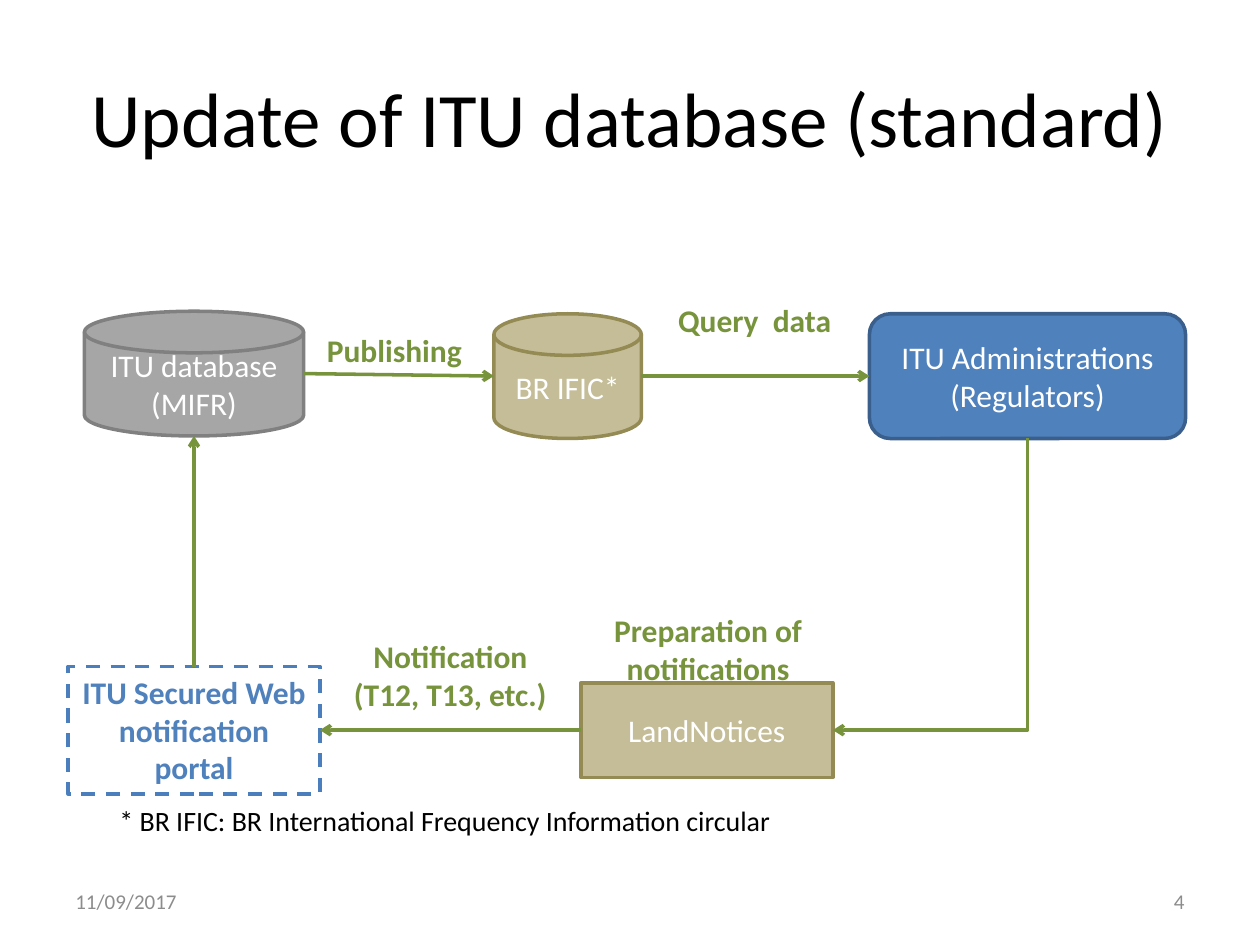
from lxml.etree import SubElement
from pptx import Presentation
from pptx.dml.color import RGBColor
from pptx.enum.dml import MSO_LINE
from pptx.enum.shapes import MSO_CONNECTOR, MSO_SHAPE
from pptx.enum.text import MSO_ANCHOR, PP_ALIGN
from pptx.oxml.ns import qn
from pptx.util import Inches, Pt

THEME = {
    "font": "Calibri", "line": 2,
    "title": 44, "body": 18, "note": 16, "footer": 12,
    "black": "000000", "white": "FFFFFF", "muted": "8C8C8C", "green": "77933C",
    "tan": "C4BD97", "tan_edge": "948A54", "gray": "A6A6A6", "gray_edge": "808080",
    "blue": "4F81BD", "blue_edge": "3A5F8C", "portal_edge": "4B7EBC",
}

TEXTS = [
    ("Update of ITU database (standard)", (0.5, 0.3, 9, 1.25), "title", "black", PP_ALIGN.CENTER, MSO_ANCHOR.MIDDLE),
    ("11/09/2017", (0.5, 6.95, 2.33, 0.4), "footer", "muted", PP_ALIGN.LEFT, MSO_ANCHOR.MIDDLE),
    ("4", (7.17, 6.95, 2.33, 0.4), "footer", "muted", PP_ALIGN.RIGHT, MSO_ANCHOR.MIDDLE),
    ("* BR IFIC: BR International Frequency Information circular", (0.85, 6.33, 5.44, 0.37),
     "note", "black", PP_ALIGN.LEFT, MSO_ANCHOR.TOP),
]

LABELS = [
    ("Preparation of notifications", (4.6, 4.8, 2.04, 0.71)),
    ("Publishing", (2.42, 2.58, 1.42, 0.4)),
    ("Query  data", (4.99, 2.34, 2, 0.4)),
    ("Notification\n(T12, T13, etc.)", (2.66, 5.01, 1.83, 0.71)),
]

NODES = {
    "notices": ("LandNotices", MSO_SHAPE.RECTANGLE, (4.61, 5.42, 2, 0.75), "tan", "tan_edge"),
    "circular": ("BR IFIC*", MSO_SHAPE.FLOWCHART_MAGNETIC_DISK, (3.92, 2.49, 1.17, 0.99), "tan", "tan_edge"),
    "regulators": ("ITU Administrations\n(Regulators)", MSO_SHAPE.ROUNDED_RECTANGLE,
                   (6.9, 2.49, 2.51, 0.99), "blue", "blue_edge"),
    "database": ("ITU database (MIFR)", MSO_SHAPE.FLOWCHART_MAGNETIC_DISK,
                 (0.67, 2.47, 1.74, 0.99), "gray", "gray_edge"),
    "portal": ("ITU Secured Web notification portal", MSO_SHAPE.RECTANGLE,
               (0.54, 5.29, 2, 1.01), None, "portal_edge"),
}

TOP, LEFT, BOTTOM, RIGHT = range(4)
FLOWS = [
    ("database", RIGHT, "circular", LEFT, MSO_CONNECTOR.STRAIGHT),
    ("circular", RIGHT, "regulators", LEFT, MSO_CONNECTOR.STRAIGHT),
    ("regulators", BOTTOM, "notices", RIGHT, MSO_CONNECTOR.ELBOW),
    ("notices", LEFT, "portal", RIGHT, MSO_CONNECTOR.ELBOW),
    ("portal", TOP, "database", BOTTOM, MSO_CONNECTOR.STRAIGHT),
]


def color(name):
    return RGBColor.from_string(THEME[name])


def write(shape, text, size, tint, align, anchor, bold=False):
    frame = shape.text_frame
    frame.text = text
    frame.word_wrap = True
    frame.vertical_anchor = anchor
    for para in frame.paragraphs:
        para.alignment = align
        for span in para.runs:
            span.font.name = THEME["font"]
            span.font.size = Pt(THEME[size])
            span.font.bold = bold
            span.font.color.rgb = color(tint)


def add_text(slide, text, place, *style):
    box = slide.shapes.add_textbox(*map(Inches, place))
    write(box, text, *style)
    return box


def add_node(slide, text, kind, place, fill, edge):
    node = slide.shapes.add_shape(kind, *map(Inches, place))
    node.shadow.inherit = False
    node.line.color.rgb = color(edge)
    node.line.width = Pt(THEME["line"])
    if fill:
        node.fill.solid()
        node.fill.fore_color.rgb = color(fill)
        write(node, text, "body", "white", PP_ALIGN.CENTER, MSO_ANCHOR.MIDDLE)
    else:
        node.fill.background()
        node.line.dash_style = MSO_LINE.DASH
        write(node, text, "body", "blue", PP_ALIGN.CENTER, MSO_ANCHOR.TOP, True)
    return node


def side_point(node, side):
    across, down = {TOP: (1, 0), LEFT: (0, 1), BOTTOM: (1, 2), RIGHT: (2, 1)}[side]
    return node.left + node.width * across // 2, node.top + node.height * down // 2


def turn_once(connector, start, end):
    width, height = abs(end[1] - start[1]), abs(end[0] - start[0])
    connector.left = (start[0] + end[0] - width) // 2
    connector.top = (start[1] + end[1] - height) // 2
    connector.width, connector.height = width, height
    properties = connector._element.spPr
    properties.find(qn("a:prstGeom")).set("prst", "bentConnector2")
    transform = properties.find(qn("a:xfrm"))
    transform.attrib.pop("flipH", None)
    transform.set("rot", str(90 * 60000))


def add_flow(slide, source, exit_side, target, entry_side, kind):
    start, end = side_point(source, exit_side), side_point(target, entry_side)
    connector = slide.shapes.add_connector(kind, *start, *end)
    disk = MSO_SHAPE.FLOWCHART_MAGNETIC_DISK
    if source.auto_shape_type != disk:
        connector.begin_connect(source, exit_side)
    if target.auto_shape_type != disk:
        connector.end_connect(target, entry_side)
    if exit_side == BOTTOM and entry_side == RIGHT:
        turn_once(connector, start, end)
    connector.line.color.rgb = color("green")
    connector.line.width = Pt(THEME["line"])
    SubElement(connector.line._get_or_add_ln(), qn("a:tailEnd"), type="arrow")
    SubElement(connector._element.spPr, qn("a:effectLst"))


def main():
    deck = Presentation()
    deck.slide_width, deck.slide_height = Inches(10), Inches(7.5)
    slide = deck.slides.add_slide(deck.slide_layouts[6])
    boxes = [add_text(slide, *entry) for entry in TEXTS]
    boxes[-1].text_frame.word_wrap = False
    nodes = {name: add_node(slide, *entry) for name, entry in NODES.items()}
    for source, exit_side, target, entry_side, kind in FLOWS:
        add_flow(slide, nodes[source], exit_side, nodes[target], entry_side, kind)
    for text, place in LABELS:
        add_text(slide, text, place, "body", "green", PP_ALIGN.CENTER, MSO_ANCHOR.TOP, True)
    deck.save("out.pptx")


if __name__ == "__main__":
    main()
